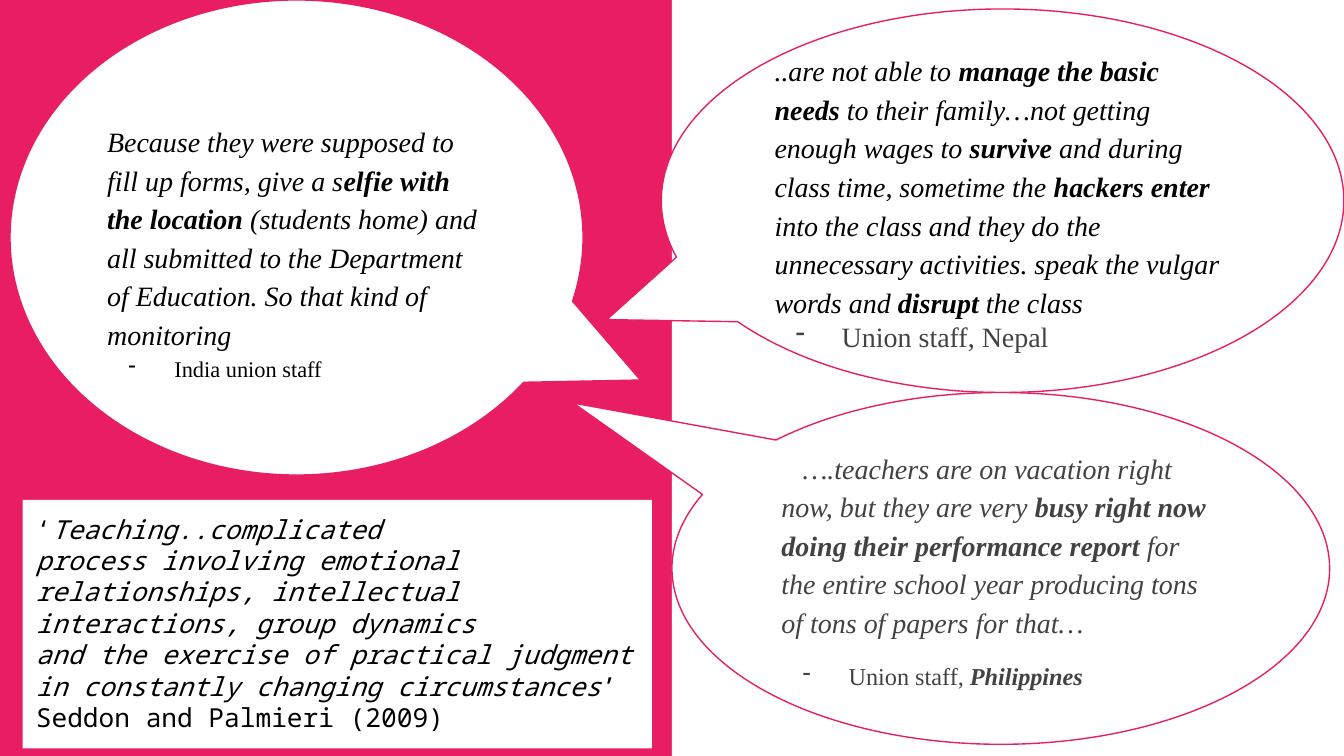
from lxml import etree
from pptx import Presentation
from pptx.dml.color import RGBColor
from pptx.enum.shapes import MSO_SHAPE
from pptx.enum.text import MSO_ANCHOR, PP_ALIGN
from pptx.oxml.ns import qn
from pptx.util import Cm, Pt

RECT, BUBBLE = MSO_SHAPE.RECTANGLE, MSO_SHAPE.OVAL_CALLOUT
TOP, MIDDLE = MSO_ANCHOR.TOP, MSO_ANCHOR.MIDDLE
LEFT = PP_ALIGN.LEFT
PINK, WHITE, BLACK, GREY = "E91D63", "FFFFFF", "000000", "424242"
SERIF, MONO = "Times New Roman", "Noto Sans Mono"


def paint(color, code):
    color.rgb = RGBColor.from_string(code)


def panel(kind, box, line=None, anchor=MIDDLE):
    """Add a white shape; box is left, top, width, height in cm."""
    shape = slide.shapes.add_shape(kind, *[Cm(n) for n in box])
    shape.shadow.inherit = False
    shape.fill.solid()
    paint(shape.fill.fore_color, WHITE)
    if line:
        paint(shape.line.color, line)
        shape.line.width = Pt(0.75)
    else:
        shape.line.fill.background()
    frame = shape.text_frame
    frame.word_wrap = True
    frame.vertical_anchor = anchor
    frame.margin_left = frame.margin_right = Cm(0.25)
    frame.margin_top = frame.margin_bottom = Cm(0.25)
    return shape


deck = Presentation()
deck.slide_width, deck.slide_height = Cm(25.4), Cm(14.29)
slide = deck.slides.add_slide(deck.slide_layouts[6])

# Pink background with a white right half
slide.background.fill.solid()
paint(slide.background.fill.fore_color, PINK)
panel(RECT, (12.7, 0, 12.7, 14.29))

# Speech bubbles: box, tail, top margin, quote (odd parts bold),
# quote colour, first-line indent, source (odd parts bold italic),
# source size, source colour, source line spacing, space before
bubbles = [
    ((12.5, 0.17, 12.9, 7.25), (-0.58, 0.31), 0.25,
     ["..are not able to ", "manage the basic needs ",
      "to their family…not getting enough wages to ", "survive ",
      "and during class time, sometime the ", "hackers enter",
      " into the class and they do the unnecessary activities. "
      "speak the vulgar words and ", "disrupt", " the class"],
     BLACK, 0, ["Union staff, Nepal"], 15, GREY, 1, 0),
    ((0.19, 0, 10.83, 8.98), (0.6, 0.3), 0.75,
     ["Because they were supposed to fill up forms, give a s",
      "elfie with the location",
      " (students home) and all submitted to the Department of "
      "Education. So that kind of monitoring"],
     BLACK, 0, ["India union staff"], 12, BLACK, 1.15, 0),
    ((12.7, 7.42, 12.43, 6.65), (-0.65, -0.47), 0.25,
     ["….teachers are on vacation right now, but they are very ",
      "busy right now doing their performance report",
      " for the entire school year producing tons of tons of papers "
      "for that…"],
     GREY, 0.4, ["Union staff, ", "Philippines"], 13, GREY, 1, 12),
]
for (box, tail, top, quote, ink, indent, source, size, tone, space,
     gap) in bubbles:
    bubble = panel(BUBBLE, box, PINK)
    for i, value in enumerate(tail):
        bubble.adjustments[i] = value
    frame = bubble.text_frame
    frame.margin_top = Cm(top)

    # Quote
    para = frame.paragraphs[0]
    para.line_spacing = 1.15
    para.space_before = Pt(gap)
    props = para._p.get_or_add_pPr()
    props.set("indent", str(Cm(indent)))
    for i, part in enumerate(quote):
        run = para.add_run()
        run.text = part
        run.font.bold = i % 2 == 1
    para.font.italic = True

    # Source with a dash bullet
    credit = frame.add_paragraph()
    credit.line_spacing = space
    credit.space_before = Pt(gap)
    props = credit._p.get_or_add_pPr()
    props.set("marL", str(Cm(1.27)))
    props.set("indent", str(Cm(-0.87)))
    color = etree.SubElement(props, qn("a:buClr"))
    etree.SubElement(color, qn("a:srgbClr"), val=tone)
    etree.SubElement(props, qn("a:buChar"), char="-")
    for i, part in enumerate(source):
        run = credit.add_run()
        run.text = part
        run.font.bold = run.font.italic = i % 2 == 1

    for item, points, shade in (para, 15, ink), (credit, size, tone):
        item.alignment = LEFT
        item.font.name = SERIF
        item.font.size = Pt(points)
        paint(item.font.color, shade)

# Definition box: parts of each line as (text, italic)
lines = [
    [("‘", False), ("Teaching..complicated", True)],
    [("process involving emotional relationships, intellectual "
      "interactions, group dynamics", True)],
    [("and the exercise of practical judgment in constantly changing "
      "circumstances", True), ("’", False)],
    [("Seddon and Palmieri (2009)", False)],
]
frame = panel(RECT, (0.43, 9.45, 11.89, 4.7), anchor=TOP).text_frame
for i, parts in enumerate(lines):
    para = frame.add_paragraph() if i else frame.paragraphs[0]
    para.alignment = LEFT
    para.font.name = MONO
    para.font.size = Pt(14)
    paint(para.font.color, BLACK)
    for text, slant in parts:
        run = para.add_run()
        run.text = text
        run.font.italic = slant

deck.save("out.pptx")
